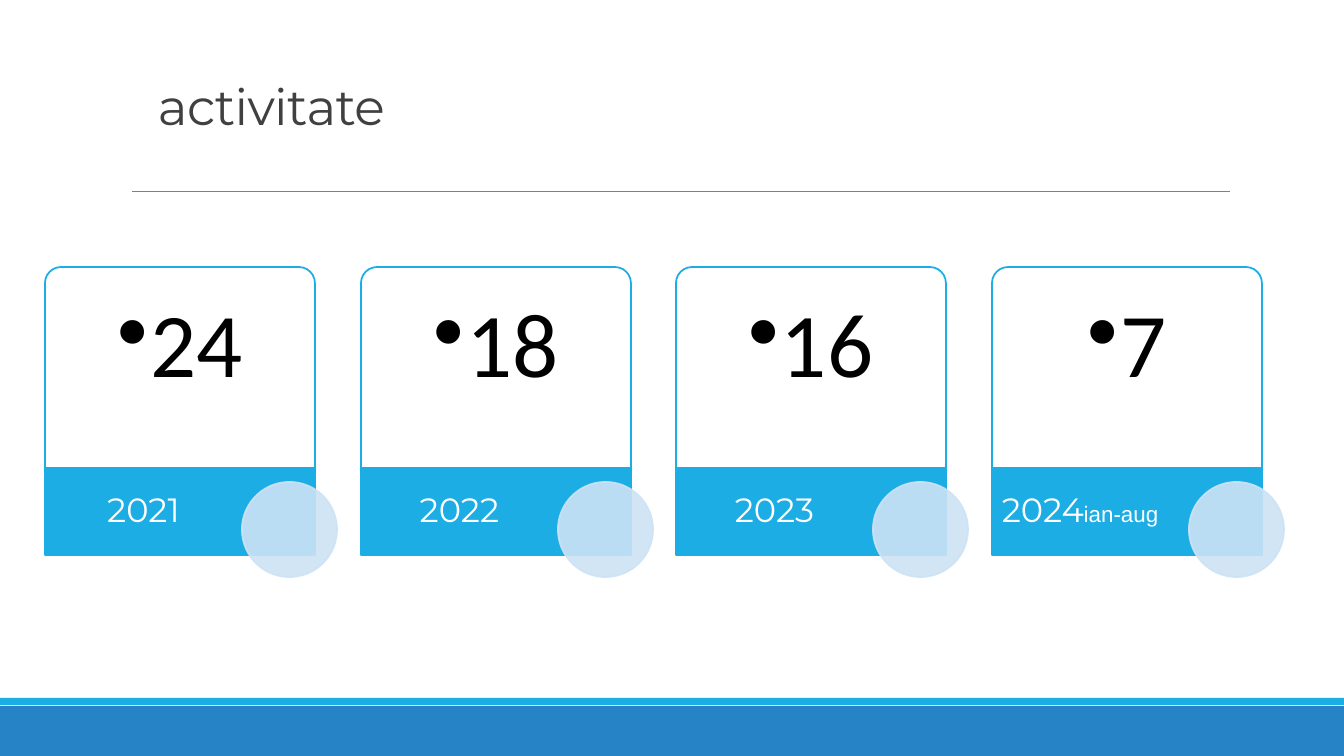
from dataclasses import dataclass

from lxml import etree
from pptx import Presentation, util as u
from pptx.dml.color import RGBColor
from pptx.enum import shapes, text
from pptx.oxml.ns import qn

EMU_PER_PX = 914400 / 100.8
SLIDE_W, SLIDE_H = 1344, 756
FIRST_CARD, LAST_CARD = 45, 992

# Label runs of each year: (words, uses the small note style)
YEARS = [
    ("24", [("2021", False)], text.PP_ALIGN.CENTER),
    ("18", [("2022", False)], text.PP_ALIGN.CENTER),
    ("16", [("2023", False)], text.PP_ALIGN.CENTER),
    ("7", [("2024", False), ("ian-aug", True)], text.PP_ALIGN.LEFT),
]


@dataclass(frozen=True)
class Theme:
    accent: str = "1CADE4"
    footer: str = "2683C6"
    badge: str = "CDE3F5"
    white: str = "FFFFFF"
    black: str = "000000"
    title: str = "404040"
    rule: str = "808080"
    heading_font: str = "Montserrat"
    count_font: str = "Calibri"
    note_font: str = "Arial"
    title_pt: float = 36
    count_pt: float = 65
    year_pt: float = 24
    note_pt: float = 16
    outline_pt: float = 1.25
    rule_pt: float = 0.5


THEME = Theme()


def px(length):
    return u.Emu(round(length * EMU_PER_PX))


def rgb(value):
    return RGBColor.from_string(value)


def make_translucent(solid_fill, percent):
    color = solid_fill.find(qn("a:srgbClr"))
    etree.SubElement(color, qn("a:alpha"), val=str(percent * 1000))


def add_block(slide, kind, box, fill, outline=None):
    block = slide.shapes.add_shape(kind, *map(px, box))
    block.shadow.inherit = False
    block.fill.solid()
    block.fill.fore_color.rgb = rgb(fill)
    if outline:
        block.line.color.rgb = rgb(outline)
        block.line.width = u.Pt(THEME.outline_pt)
    else:
        block.line.fill.background()
    return block


def add_label(slide, box, insets, anchor, align, spacing):
    """Add an empty one-paragraph text box and return its paragraph."""
    frame = slide.shapes.add_textbox(*map(px, box)).text_frame
    frame.word_wrap = True
    frame.vertical_anchor = anchor
    (frame.margin_left, frame.margin_top,
     frame.margin_right, frame.margin_bottom) = map(px, insets)
    paragraph = frame.paragraphs[0]
    paragraph.alignment = align
    paragraph.line_spacing = spacing
    return paragraph


def add_run(paragraph, words, font, size, color):
    run = paragraph.add_run()
    run.text = words
    run.font.name = font
    run.font.size = u.Pt(size)
    run.font.color.rgb = rgb(color)
    return run


def add_bullet(paragraph, indent):
    properties = paragraph._p.get_or_add_pPr()
    properties.set("marL", str(px(indent)))
    properties.set("indent", str(-px(indent)))
    etree.SubElement(properties, qn("a:buChar"), char="•")


def add_rule(slide, left, right, y):
    rule = slide.shapes.add_connector(
        shapes.MSO_CONNECTOR.STRAIGHT, px(left), px(y), px(right), px(y))
    rule.line.color.rgb = rgb(THEME.rule)
    rule.line.width = u.Pt(THEME.rule_pt)
    etree.SubElement(rule._element.spPr, qn("a:effectLst"))


def add_year_card(slide, left, count, year_runs, year_align):
    preset = shapes.MSO_SHAPE

    # Upper panel with the count
    panel = add_block(slide, preset.ROUND_2_SAME_RECTANGLE,
                      (left, 267, 270, 201), THEME.white, THEME.accent)
    panel.adjustments[0] = 0.08
    panel.adjustments[1] = 0
    make_translucent(panel._element.spPr.find(qn("a:solidFill")), 90)
    total = add_label(slide, (left + 5, 272, 260, 196), (9, 27, 9, 9),
                      text.MSO_ANCHOR.TOP, text.PP_ALIGN.CENTER, 0.9)
    total.level = 1
    add_bullet(total, 31)
    add_run(total, count, THEME.count_font, THEME.count_pt, THEME.black)

    # Lower band with the year
    add_block(slide, preset.RECTANGLE, (left, 468, 270, 87),
              THEME.accent, THEME.accent)
    year = add_label(slide, (left, 468, 190, 87), (10, 0, 3, 0),
                     text.MSO_ANCHOR.MIDDLE, year_align, 0.9)
    for words, is_note in year_runs:
        font = THEME.note_font if is_note else THEME.heading_font
        size = THEME.note_pt if is_note else THEME.year_pt
        add_run(year, words, font, size, THEME.white)

    # Round badge over the corner
    badge = add_block(slide, preset.OVAL, (left + 197, 482, 95, 95),
                      THEME.badge, THEME.badge)
    for solid_fill in badge._element.spPr.iter(qn("a:solidFill")):
        make_translucent(solid_fill, 90)


def main():
    deck = Presentation()
    deck.slide_width, deck.slide_height = px(SLIDE_W), px(SLIDE_H)
    slide = deck.slides.add_slide(deck.slide_layouts[6])

    # Footer bands and title rule
    rectangle = shapes.MSO_SHAPE.RECTANGLE
    add_block(slide, rectangle, (0, 706, SLIDE_W, 50), THEME.footer)
    add_block(slide, rectangle, (0, 698, SLIDE_W, 7), THEME.accent)
    add_rule(slide, 132, 1230, 191)

    # Title
    title = add_label(slide, (148, 31, 1082, 110), (10, 5, 10, 5),
                      text.MSO_ANCHOR.BOTTOM, text.PP_ALIGN.LEFT, 0.85)
    heading = add_run(title, "activitate", THEME.heading_font,
                      THEME.title_pt, THEME.title)
    heading.font._element.set("spc", "-50")

    # Year cards at an equal pitch
    pitch = (LAST_CARD - FIRST_CARD) / (len(YEARS) - 1)
    for index, (count, year_runs, year_align) in enumerate(YEARS):
        add_year_card(slide, round(FIRST_CARD + index * pitch),
                      count, year_runs, year_align)

    deck.save("out.pptx")


if __name__ == "__main__":
    main()
